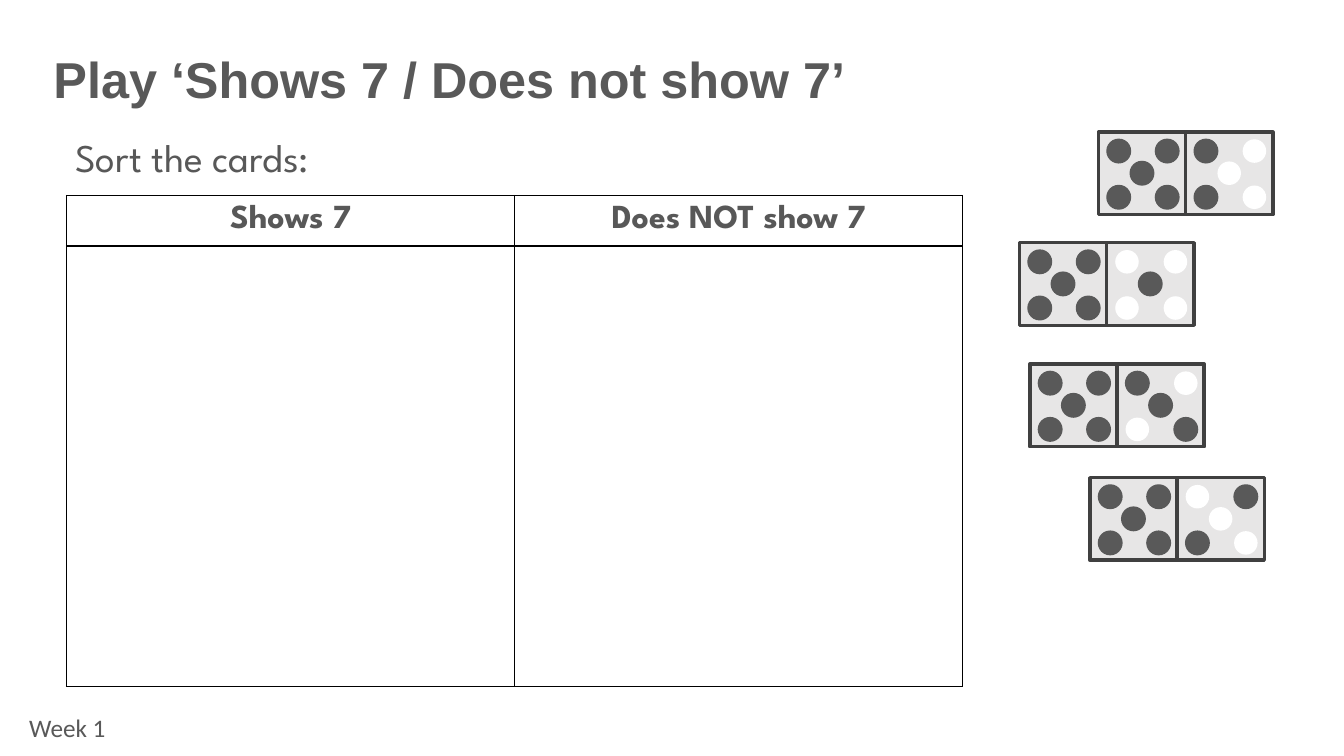
import dataclasses
from typing import Any

import lxml.etree
import pptx
import pptx.dml.color
import pptx.enum.shapes
import pptx.enum.text
import pptx.oxml.ns
import pptx.util

Pt = pptx.util.Pt
RGB = pptx.dml.color.RGBColor.from_string
SHAPE = pptx.enum.shapes.MSO_SHAPE
ANCHOR = pptx.enum.text.MSO_ANCHOR
ALIGN = pptx.enum.text.PP_ALIGN
AUTO = pptx.enum.text.MSO_AUTO_SIZE


@dataclasses.dataclass(frozen=True)
class TextStyle:
    font: str
    size: float
    color: str
    bold: bool = False


@dataclasses.dataclass(frozen=True)
class Theme:
    title: TextStyle = TextStyle("Arial", 36, "595959", True)
    prompt: TextStyle = TextStyle("League Spartan", 28, "585858")
    header: TextStyle = TextStyle("League Spartan", 24, "585858", True)
    week: TextStyle = TextStyle("Calibri", 18, "595959")
    white: str = "FFFFFF"
    border: str = "000000"
    tile: str = "E7E6E6"
    tile_line: str = "404040"
    dot: str = "595959"


@dataclasses.dataclass(frozen=True)
class Domino:
    """Spots run top left, top right, centre, bottom left, bottom right."""
    left: float
    top: float
    right_spots: str
    left_spots: str = "11111"


THEME = Theme()
HALF_W, HALF_H, DOT = 62.3, 59, 16.8
SPOTS = [(6.1, 5.2), (40.7, 5.2), (22.7, 21), (6.1, 38.2), (40.7, 38.2)]
DOMINOES = [
    Domino(784.6, 94.3, "10010"),
    Domino(728.2, 173.4, "00100"),
    Domino(735.6, 260.1, "10101"),
    Domino(778.5, 341.2, "01010"),
]


def add_run(p: Any, text: str, style: TextStyle) -> None:
    r = p.add_run()
    r.text = text
    r.font.name = style.font
    r.font.size = Pt(style.size)
    r.font.bold = style.bold
    r.font.color.rgb = RGB(style.color)


def place(sp: Any, left: float, top: float, width: float, height: float) -> None:
    sp.left, sp.top, sp.width, sp.height = Pt(left), Pt(top), Pt(width), Pt(height)


def add_label(s: Any, box: tuple[float, ...], text: str, style: TextStyle) -> None:
    sp = s.shapes.add_textbox(*map(Pt, box))
    sp.text_frame.word_wrap = True
    add_run(sp.text_frame.paragraphs[0], text, style)


def add_part(grp: Any, kind: Any, box: tuple[float, ...], fill: str,
             line: str | None = None, weight: float = 1) -> None:
    sp = grp.shapes.add_shape(kind, *map(Pt, box))
    sp.shadow.inherit = False
    sp.fill.solid()
    sp.fill.fore_color.rgb = RGB(fill)
    if line is None:
        sp.line.fill.background()
    else:
        sp.line.color.rgb = RGB(line)
        sp.line.width = Pt(weight)


def add_domino(s: Any, domino: Domino) -> None:
    grp = s.shapes.add_group_shape()
    for i, spots in enumerate((domino.left_spots, domino.right_spots)):
        x = domino.left + i * HALF_W
        add_part(grp, SHAPE.RECTANGLE, (x, domino.top, HALF_W, HALF_H),
                 THEME.tile, THEME.tile_line, 2.5)
        for (dx, dy), spot in zip(SPOTS, spots):
            box = (x + dx, domino.top + dy, DOT, DOT)
            if spot == "1":
                add_part(grp, SHAPE.OVAL, box, THEME.dot, THEME.dot)
            else:
                add_part(grp, SHAPE.OVAL, box, THEME.white)


def style_cell(cell: Any) -> None:
    qn = pptx.oxml.ns.qn
    tc_pr = cell._tc.get_or_add_tcPr()
    for side in ("a:lnL", "a:lnR", "a:lnT", "a:lnB"):
        ln = lxml.etree.SubElement(tc_pr, qn(side), w=str(Pt(1)))
        fill = lxml.etree.SubElement(ln, qn("a:solidFill"))
        lxml.etree.SubElement(fill, qn("a:srgbClr"), val=THEME.border)
    cell.fill.solid()
    cell.fill.fore_color.rgb = RGB(THEME.white)
    cell.vertical_anchor = ANCHOR.MIDDLE


def add_sorting_table(s: Any, headers: list[str]) -> None:
    row_heights, col_width = (29.5, 314.5), 320
    table = s.shapes.add_table(
        len(row_heights), len(headers), Pt(47.5), Pt(139.7),
        Pt(col_width * len(headers)), Pt(sum(row_heights))).table
    table.first_row = table.horz_banding = False
    for row, height in zip(table.rows, row_heights):
        row.height = Pt(height)
    for col in table.columns:
        col.width = Pt(col_width)
    for cell in table.iter_cells():
        style_cell(cell)
    for i, text in enumerate(headers):
        p = table.cell(0, i).text_frame.paragraphs[0]
        p.alignment = ALIGN.CENTER
        add_run(p, text, THEME.header)


def main() -> None:
    prs = pptx.Presentation()
    prs.slide_width, prs.slide_height = Pt(960), Pt(540)
    s = prs.slides.add_slide(prs.slide_layouts[5])

    # Title
    title = s.shapes.title
    place(title, 31, 28.8, 862.6, 60.5)
    tf = title.text_frame
    tf.auto_size = AUTO.NONE
    tf.vertical_anchor = ANCHOR.MIDDLE
    p = tf.paragraphs[0]
    p.alignment = ALIGN.LEFT
    p.line_spacing = 0.9
    add_run(p, "Play ‘Shows 7 / Does not show 7’", THEME.title)

    # Instruction, sorting table and week
    add_label(s, (46.8, 91.4, 344, 42.5), "Sort the cards:", THEME.prompt)
    add_sorting_table(s, ["Shows 7", "Does NOT show 7"])
    add_label(s, (13.7, 505.4, 144, 29), "Week 1", THEME.week)

    # Domino cards
    for domino in DOMINOES:
        add_domino(s, domino)

    prs.save("out.pptx")


if __name__ == "__main__":
    main()
